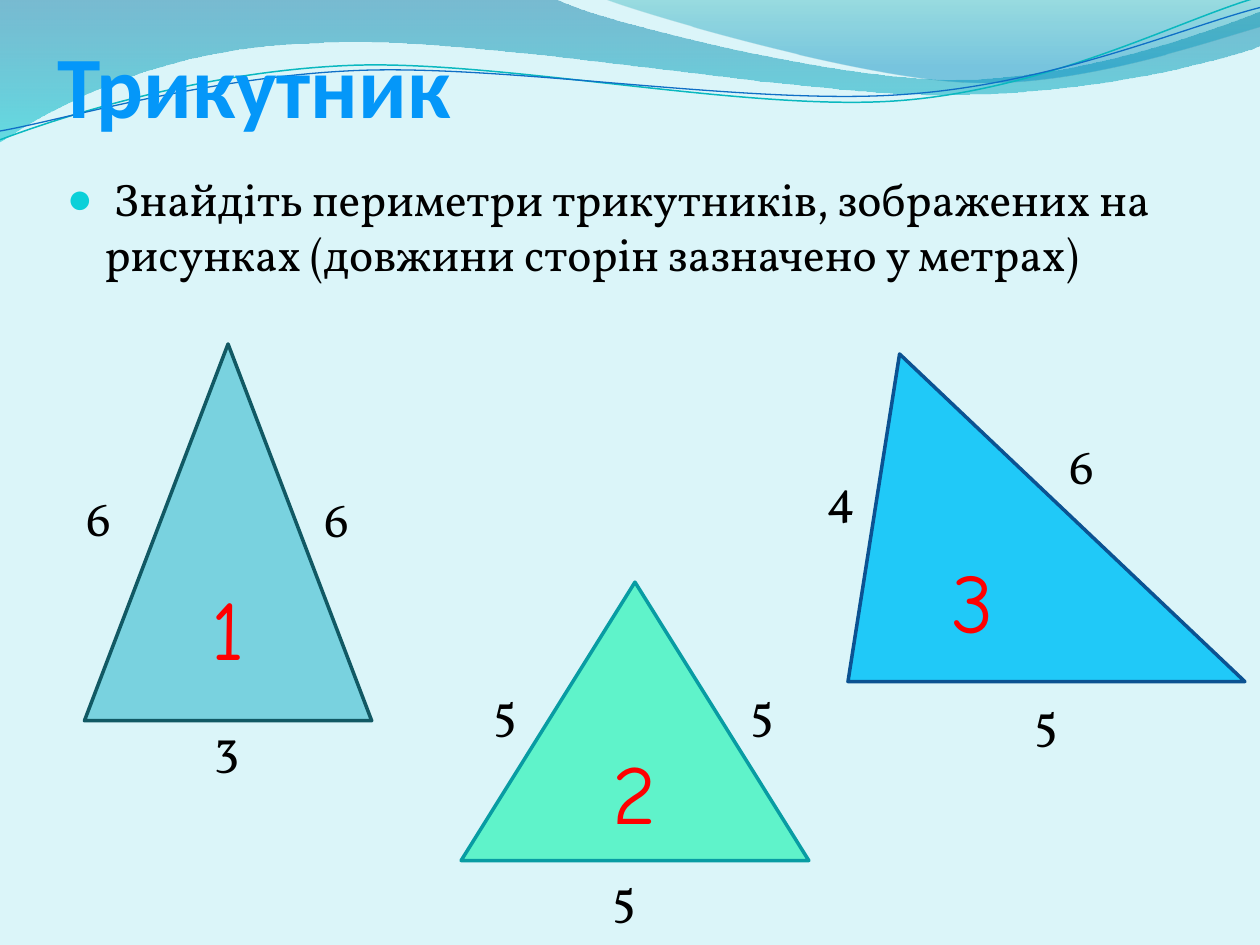
import pptx
import pptx.util
import pptx.dml.color
import pptx.enum.shapes
import pptx.enum.text
import pptx.oxml
import pptx.oxml.ns

C = {
    "back": "DBF5F9", "text": "000000", "number": "FF0000", "title": "0497F9",
    "bullet": "0BD0D9", "deep": "0074A1", "aqua": "00C6CF", "teal": "00A1A9",
    "blue": "008BBF", "line_teal": "0AB8BF", "line_blue": "0F6FC6",
    "tri1": "21B2C9", "edge1": "115964", "tri2": "5FF3CA", "edge2": "089CA3",
    "tri3": "20C9F8", "edge3": "0B5292",
}
RGB = {name: pptx.dml.color.RGBColor.from_string(value) for name, value in C.items()}
NS = 'xmlns:a="http://schemas.openxmlformats.org/drawingml/2006/main"'
Pt = pptx.util.Pt

prs = pptx.Presentation()
prs.slide_width = pptx.util.Inches(10)
prs.slide_height = pptx.util.Inches(7.5)
U = prs.slide_width // 10
s = prs.slides.add_slide(prs.slide_layouts[1])
s.background.fill.solid()
s.background.fill.fore_color.rgb = RGB["back"]
tree = s.shapes.title.element.getparent()


def box(*units):
    return [round(u * U) for u in units]


def trace(start, parts, close):
    builder = s.shapes.build_freeform(*box(*start), scale=1.0)
    builder.add_line_segments([box(*part[-2:]) for part in parts], close=close)
    sp = builder.convert_to_shape()
    sp.shadow.inherit = False
    lines = list(sp.element.spPr.iter(pptx.oxml.ns.qn("a:lnTo")))
    for line, part in zip(lines, parts):
        if len(part) == 6:
            values = box(*part)
            points = "".join(f'<a:pt x="{x - sp.left}" y="{y - sp.top}"/>'
                             for x, y in zip(values[::2], values[1::2]))
            curve = pptx.oxml.parse_xml(f"<a:cubicBezTo {NS}>{points}</a:cubicBezTo>")
            line.getparent().replace(line, curve)
    return sp


see_through = []

waves = [
    ((0, 0), [(4.4, -0.01), (4.76, 0.17, 6.64, 0.63, 7.58, 0.63),
              (8.53, 0.63, 9.58, 0.26, 10, 0.09), (10.01, 0.36),
              (9.83, 0.44, 8.7, 0.76, 7.46, 0.75), (6.22, 0.75, 3.82, 0.28, 2.57, 0.34),
              (1.29, 0.36, 0.46, 0.83, -0.01, 1.13)],
     [(0, "deep", 45), (1, "aqua", 55)]),
    ((4.79, -0.01), [(5.09, 0.11, 6.82, 0.62, 7.69, 0.65),
                     (8.56, 0.69, 9.61, 0.32, 10, 0.21), (10, 0)],
     [(0, "teal", 30), (0.8, "blue", 45)]),
]
for start, parts, stops in waves:
    sp = trace(start, parts, True)
    sp.line.fill.background()
    sp.fill.gradient()
    sp.fill.gradient_angle = 270
    for stop, (position, color, _) in zip(sp.fill.gradient_stops, stops):
        stop.position = position
        stop.color.rgb = RGB[color]
    see_through.append((sp, [opacity for _, _, opacity in stops]))

strands = [
    ((0, 1.11), [(0.48, 0.93, 1.58, 0.57, 2.77, 0.52), (3.95, 0.47, 5.93, 0.89, 7.13, 0.8),
                 (8.33, 0.71, 9.38, 0.15, 9.98, -0.02)], "line_teal", 0.85),
    ((0, 1.04), [(0.47, 0.96, 1.64, 0.61, 2.83, 0.56), (4.03, 0.51, 5.97, 0.84, 7.17, 0.75),
                 (8.36, 0.67, 9.41, 0.21, 10, 0.06)], "line_blue", 0.75),
]
for start, parts, color, width in strands:
    sp = trace(start, parts, False)
    sp.fill.background()
    sp.line.color.rgb = RGB[color]
    sp.line.width = Pt(width)

body = s.placeholders[1]
tree.append(body.element)
body.left, body.top, body.width, body.height = box(0.43, 1.31, 9, 1.24)
tf = body.text_frame
tf.auto_size = pptx.enum.text.MSO_AUTO_SIZE.NONE
p = tf.paragraphs[0]
r = p.add_run()
r.text = " Знайдіть периметри трикутників, зображених на рисунках (довжини сторін зазначено у метрах)"
r.font.size = Pt(26)
r.font.name = "Vollkorn"
r.font.color.rgb = RGB["text"]
pPr = p._p.get_or_add_pPr()
pPr.set("marL", str(round(0.3 * U)))
pPr.set("indent", str(round(-0.3 * U)))
for xml in (f'<a:buClr {NS}><a:srgbClr val="{C["bullet"]}"/></a:buClr>',
            f'<a:buSzPct {NS} val="95000"/>',
            f'<a:buChar {NS} char="●"/>'):
    pPr.append(pptx.oxml.parse_xml(xml))

triangles = [
    ("1", (0.67, 2.73, 2.28, 2.99), 0.5, "tri1", "edge1"),
    ("2", (3.66, 4.62, 2.76, 2.21), 0.5, "tri2", "edge2"),
    ("3", (6.73, 2.81, 3.15, 2.6), 0.13, "tri3", "edge3"),
]
for number, place, apex, fill, edge in triangles:
    sp = s.shapes.add_shape(pptx.enum.shapes.MSO_SHAPE.ISOSCELES_TRIANGLE, *box(*place))
    sp.adjustments[0] = apex
    sp.shadow.inherit = False
    sp.fill.solid()
    sp.fill.fore_color.rgb = RGB[fill]
    sp.line.color.rgb = RGB[edge]
    sp.line.width = Pt(2)
    if number == "1":
        see_through.append((sp, [52]))
    tf = sp.text_frame
    tf.vertical_anchor = pptx.enum.text.MSO_ANCHOR.MIDDLE
    p = tf.paragraphs[0]
    p.alignment = pptx.enum.text.PP_ALIGN.CENTER
    r = p.add_run()
    r.text = number
    r.font.size = Pt(48)
    r.font.name = "Comic Neue"
    r.font.color.rgb = RGB["number"]

for sp, opacities in see_through:
    colors = sp.element.spPr.iter(pptx.oxml.ns.qn("a:srgbClr"))
    for color, opacity in zip(list(colors), opacities):
        color.append(pptx.oxml.parse_xml(f'<a:alpha {NS} val="{opacity * 1000}"/>'))

sides = [
    ("6", 0.59, 3.82), ("6", 2.48, 3.83), ("3", 1.6, 5.64),
    ("5", 3.82, 5.35), ("5", 5.86, 5.35), ("5", 4.76, 6.83),
    ("6", 8.39, 3.41), ("5", 8.11, 5.43), ("4", 6.46, 3.65),
]
for length, x, y in sides:
    tf = s.shapes.add_textbox(*box(x, y, 0.55, 0.57)).text_frame
    tf.word_wrap = True
    tf.auto_size = pptx.enum.text.MSO_AUTO_SIZE.SHAPE_TO_FIT_TEXT
    r = tf.paragraphs[0].add_run()
    r.text = length
    r.font.size = Pt(28)
    r.font.name = "Vollkorn"
    r.font.color.rgb = RGB["text"]

title = s.shapes.title
tree.append(title.element)
title.left, title.top, title.width, title.height = box(0.46, 0.13, 3.63, 0.95)
tf = title.text_frame
tf.auto_size = pptx.enum.text.MSO_AUTO_SIZE.NONE
tf.vertical_anchor = pptx.enum.text.MSO_ANCHOR.BOTTOM
tf.margin_left = tf.margin_right = tf.margin_bottom = 0
tf.margin_top = round(0.05 * U)
p = tf.paragraphs[0]
p.alignment = pptx.enum.text.PP_ALIGN.LEFT
r = p.add_run()
r.text = "Трикутник"
r.font.size = Pt(50)
r.font.name = "Calibri"
r.font.bold = True
r.font.color.rgb = RGB["title"]

prs.save("out.pptx")
